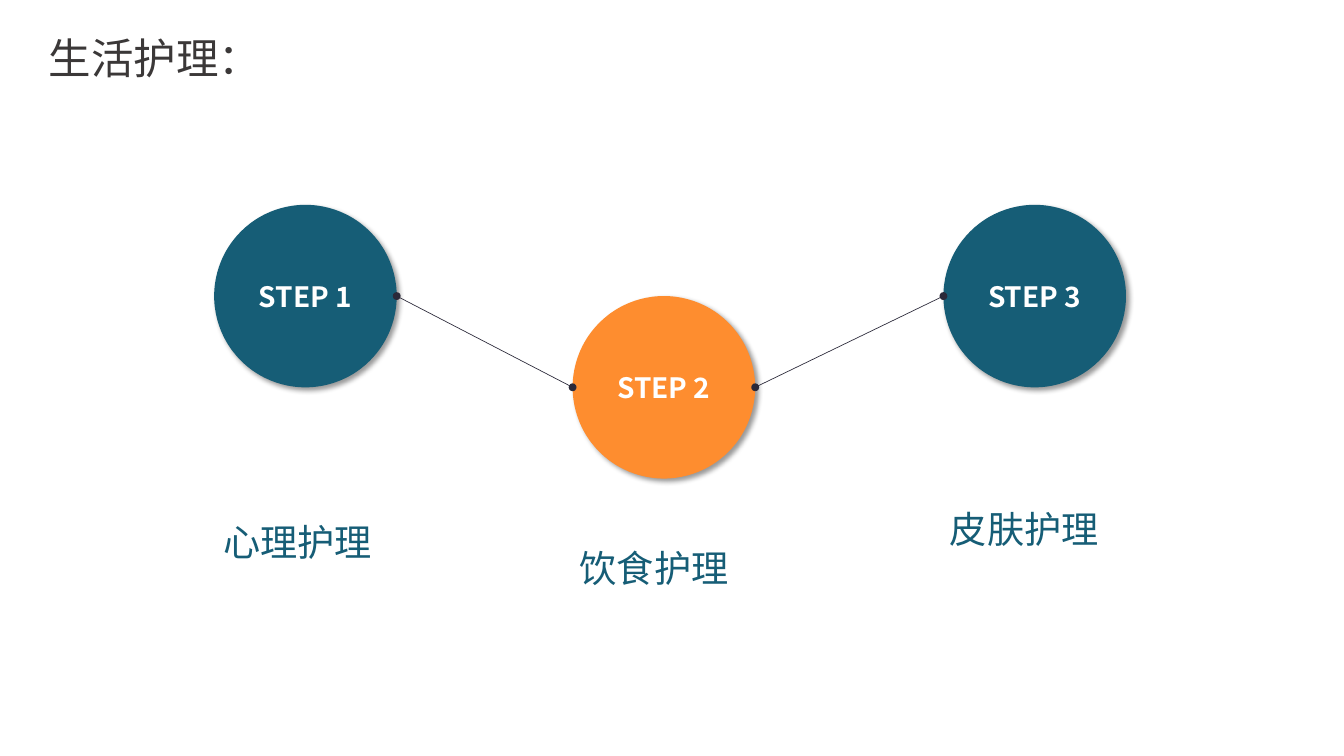
from lxml import etree
from pptx import Presentation
from pptx.dml.color import RGBColor
from pptx.enum.shapes import MSO_CONNECTOR, MSO_SHAPE
from pptx.enum.text import MSO_ANCHOR, MSO_AUTO_SIZE, PP_ALIGN
from pptx.oxml import parse_xml
from pptx.oxml.ns import qn
from pptx.util import Pt

STRAIGHT = MSO_CONNECTOR.STRAIGHT
OVAL = MSO_SHAPE.OVAL
TOP, MIDDLE = MSO_ANCHOR.TOP, MSO_ANCHOR.MIDDLE
LEFT, CENTER = PP_ALIGN.LEFT, PP_ALIGN.CENTER
FIXED_SIZE = MSO_AUTO_SIZE.NONE

COLORS = {
    "teal": "165D76",
    "orange": "FE8D2F",
    "line": "2B2939",
    "title": "3B3838",
    "white": "FFFFFF",
}
HEADING_FONT, LABEL_FONT = "Noto Sans CJK SC", "Arial"
DIAMETER = 137.5
STEPS = [
    ("STEP 1", "teal", (161.3, 154.3), "心理护理", (161.3, 381)),
    ("STEP 2", "orange", (431.3, 223), "饮食护理", (429.7, 400.3)),
    ("STEP 3", "teal", (710.6, 154.3), "皮肤护理", (708.4, 370.8)),
]
SHADOW = (
    '<a:effectLst xmlns:a="http://schemas.openxmlformats.org/drawingml/2006/main">'
    '<a:outerShdw blurRad="50800" dist="38100" dir="2700000" algn="tl" rotWithShape="0">'
    '<a:srgbClr val="000000"><a:alpha val="40000"/></a:srgbClr>'
    "</a:outerShdw></a:effectLst>"
)


def color(name):
    """Return the named palette colour."""
    return RGBColor.from_string(COLORS[name])


def write(shape, text, font, size, color_name, alignment=LEFT, bold=False):
    """Write one formatted paragraph into a shape."""
    paragraph = shape.text_frame.paragraphs[0]
    paragraph.text = text
    paragraph.alignment = alignment
    paragraph.font.name = font
    paragraph.font.size = Pt(size)
    paragraph.font.bold = bold
    paragraph.font.color.rgb = color(color_name)
    return paragraph


def add_title(slide, left, top, width, height):
    """Place the slide title in its placeholder."""
    title = slide.shapes.title
    title.left, title.top = Pt(left), Pt(top)
    title.width, title.height = Pt(width), Pt(height)
    frame = title.text_frame
    frame.auto_size = FIXED_SIZE
    frame.word_wrap = False
    frame.vertical_anchor = TOP
    write(title, "生活护理：", HEADING_FONT, 32, "title")


def add_circle(slide, left, top, text, fill):
    """Draw one shadowed step circle."""
    circle = slide.shapes.add_shape(OVAL, Pt(left), Pt(top), Pt(DIAMETER), Pt(DIAMETER))
    circle.fill.solid()
    circle.fill.fore_color.rgb = color(fill)
    circle.line.fill.background()
    circle._element.spPr.append(parse_xml(SHADOW))
    circle.text_frame.vertical_anchor = MIDDLE
    write(circle, text, HEADING_FONT, 21.1, "white", CENTER, True)
    return circle


def add_label(slide, left, top, text):
    """Place the care label of one step."""
    label = slide.shapes.add_textbox(Pt(left), Pt(top), Pt(191.5), Pt(48))
    label.text_frame.word_wrap = True
    write(label, text, LABEL_FONT, 28, "teal").line_spacing = 1.2


def add_link(slide, first, second):
    """Link the facing sides of two circles with a dotted-end line."""
    link = slide.shapes.add_connector(
        STRAIGHT,
        first.left + first.width, first.top + first.height // 2,
        second.left, second.top + second.height // 2,
    )
    link.line.color.rgb = color("line")
    link.line.width = Pt(0.5)
    outline = link.line._get_or_add_ln()
    for end in ("a:headEnd", "a:tailEnd"):
        etree.SubElement(outline, qn(end), type="oval")
    etree.SubElement(link._element.spPr, qn("a:effectLst"))


def add_steps(slide):
    """Build the chain of circles, links and labels."""
    circles = [add_circle(slide, *place, step, fill) for step, fill, place, _, _ in STEPS]
    for first, second in zip(circles, circles[1:]):
        add_link(slide, first, second)
    for _, _, _, text, place in STEPS:
        add_label(slide, *place, text)


def main():
    """Create and save the presentation."""
    presentation = Presentation()
    presentation.slide_width, presentation.slide_height = Pt(1012.3), Pt(569.5)
    slide = presentation.slides.add_slide(presentation.slide_layouts[5])
    add_title(slide, 29.5, 20.9, 177, 46.8)
    add_steps(slide)
    presentation.save("out.pptx")


if __name__ == "__main__":
    main()
